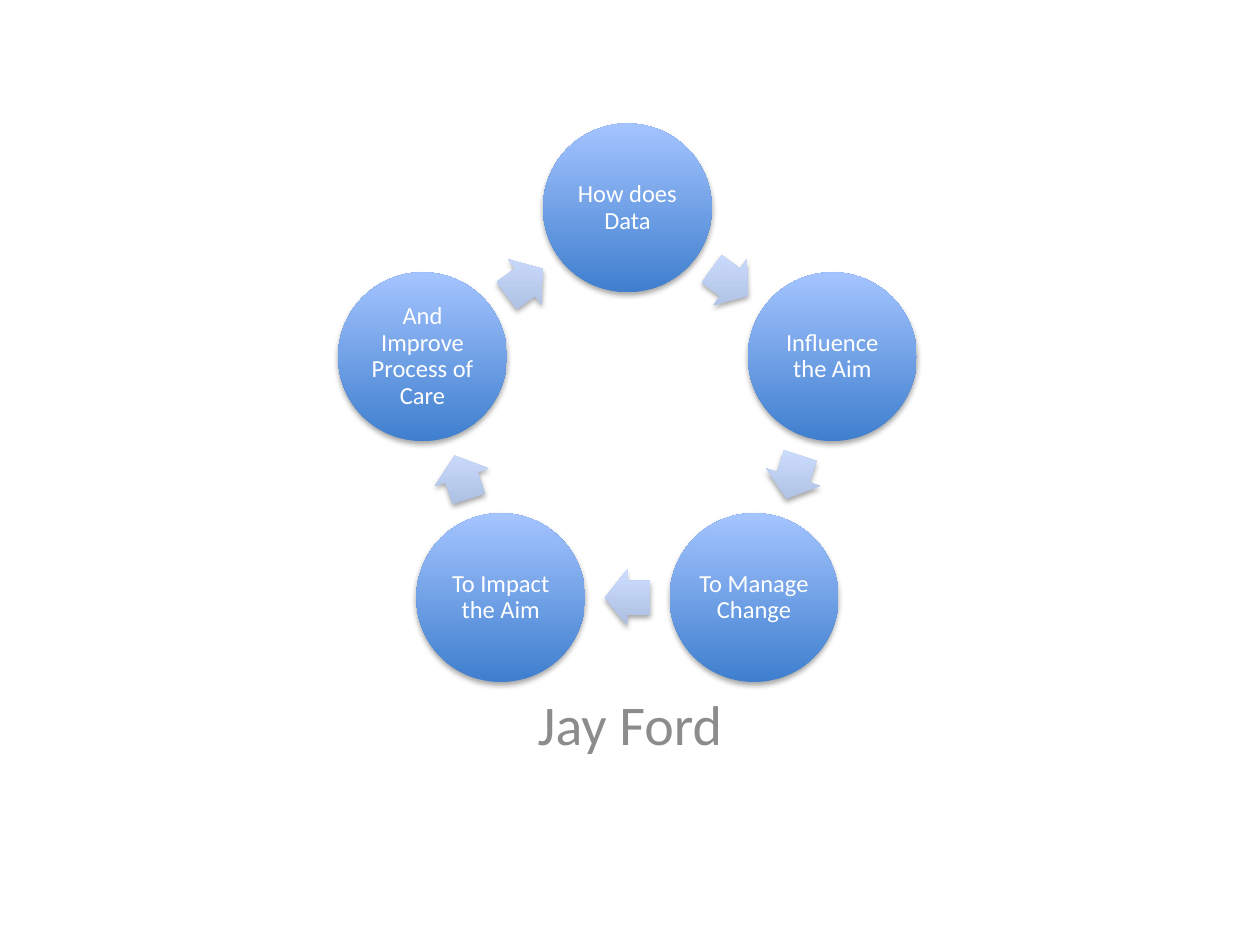
import math

import pptx
import pptx.dml.color
import pptx.enum.shapes
import pptx.enum.text
import pptx.oxml
import pptx.oxml.ns
import pptx.util

Inches = pptx.util.Inches
Pt = pptx.util.Pt
RGBColor = pptx.dml.color.RGBColor
SHAPE = pptx.enum.shapes.MSO_SHAPE
CENTER = pptx.enum.text.PP_ALIGN.CENTER

# Content
STEPS = [
    "How does Data",
    "Influence the Aim",
    "To Manage Change",
    "To Impact the Aim",
    "And Improve Process of Care",
]
AUTHOR = "Jay Ford"

# Style: gradients run from the bottom colour to the top colour
FONT = "Calibri"
WHITE = RGBColor(0xFF, 0xFF, 0xFF)
GREY = RGBColor(0x8C, 0x8C, 0x8C)
CIRCLE_COLORS = (RGBColor(0x3F, 0x7F, 0xCE), RGBColor(0xA4, 0xC4, 0xFF))
ARROW_COLORS = (RGBColor(0xAD, 0xBF, 0xE1), RGBColor(0xCC, 0xDD, 0xFF))

# Ring geometry, in inches
CENTER_X, CENTER_Y, RADIUS = 4.98, 3.36, 1.71
CIRCLE_SIZE = 1.34
ARROW_LENGTH, ARROW_WIDTH = 0.36, 0.45
TURN = 360 / len(STEPS)


def step_center(index):
    angle = math.radians(index * TURN)
    return (CENTER_X + RADIUS * math.sin(angle),
            CENTER_Y - RADIUS * math.cos(angle))


def add_ring_shape(slide, kind, center, width, height, colors):
    """Add a shape around a centre, with upright gradient and soft shadow."""
    x, y = center
    shape = slide.shapes.add_shape(
        kind, Inches(x - width / 2), Inches(y - height / 2),
        Inches(width), Inches(height))
    shape.line.fill.background()
    shape.fill.gradient()
    shape.fill.gradient_angle = 90
    for stop, color in zip(shape.fill.gradient_stops, colors):
        stop.color.rgb = color
    properties = shape.element.spPr
    properties.find(pptx.oxml.ns.qn("a:gradFill")).set("rotWithShape", "0")
    shape.shadow.inherit = False
    properties.find(pptx.oxml.ns.qn("a:effectLst")).append(pptx.oxml.parse_xml(
        f'<a:outerShdw {pptx.oxml.ns.nsdecls("a")} blurRad="{Pt(3.1)}" '
        f'dist="{Pt(1.8)}" dir="5400000" rotWithShape="0">'
        '<a:srgbClr val="000000"><a:alpha val="35000"/></a:srgbClr>'
        '</a:outerShdw>'))
    return shape


def add_text(para, text, size, color):
    para.alignment = CENTER
    span = para.add_run()
    span.text = text
    span.font.name = FONT
    span.font.size = Pt(size)
    span.font.color.rgb = color


def add_step(slide, index, text):
    circle = add_ring_shape(slide, SHAPE.OVAL, step_center(index),
                            CIRCLE_SIZE, CIRCLE_SIZE, CIRCLE_COLORS)
    frame = circle.text_frame
    frame.word_wrap = True
    frame.vertical_anchor = pptx.enum.text.MSO_ANCHOR.MIDDLE
    frame.margin_left = frame.margin_right = Inches(0.02)
    frame.margin_top = frame.margin_bottom = Inches(0.02)
    para = frame.paragraphs[0]
    para.line_spacing = 0.9
    add_text(para, text, 14, WHITE)


def add_arrow(slide, index):
    """Point from one step to the next, halfway between the two."""
    ends = zip(step_center(index), step_center(index + 1))
    middle = [sum(pair) / 2 for pair in ends]
    arrow = add_ring_shape(slide, SHAPE.RIGHT_ARROW, middle,
                           ARROW_LENGTH, ARROW_WIDTH, ARROW_COLORS)
    arrow.adjustments[0] = 0.6
    arrow.adjustments[1] = 0.5
    arrow.rotation = (index + 0.5) * TURN


def main():
    deck = pptx.Presentation()
    deck.slide_width, deck.slide_height = Inches(10), Inches(7.5)
    slide = deck.slides.add_slide(deck.slide_layouts[0])

    # The layout's subtitle holds the author; its title is not used
    title = slide.shapes.title.element
    title.getparent().remove(title)
    subtitle = slide.placeholders[1]
    subtitle.left, subtitle.top = Inches(1.5), Inches(5.42)
    subtitle.width, subtitle.height = Inches(7), Inches(0.74)
    add_text(subtitle.text_frame.paragraphs[0], AUTHOR, 32, GREY)

    # Cycle of steps
    for index, text in enumerate(STEPS):
        add_step(slide, index, text)
        add_arrow(slide, index)

    deck.save("out.pptx")


if __name__ == "__main__":
    main()
